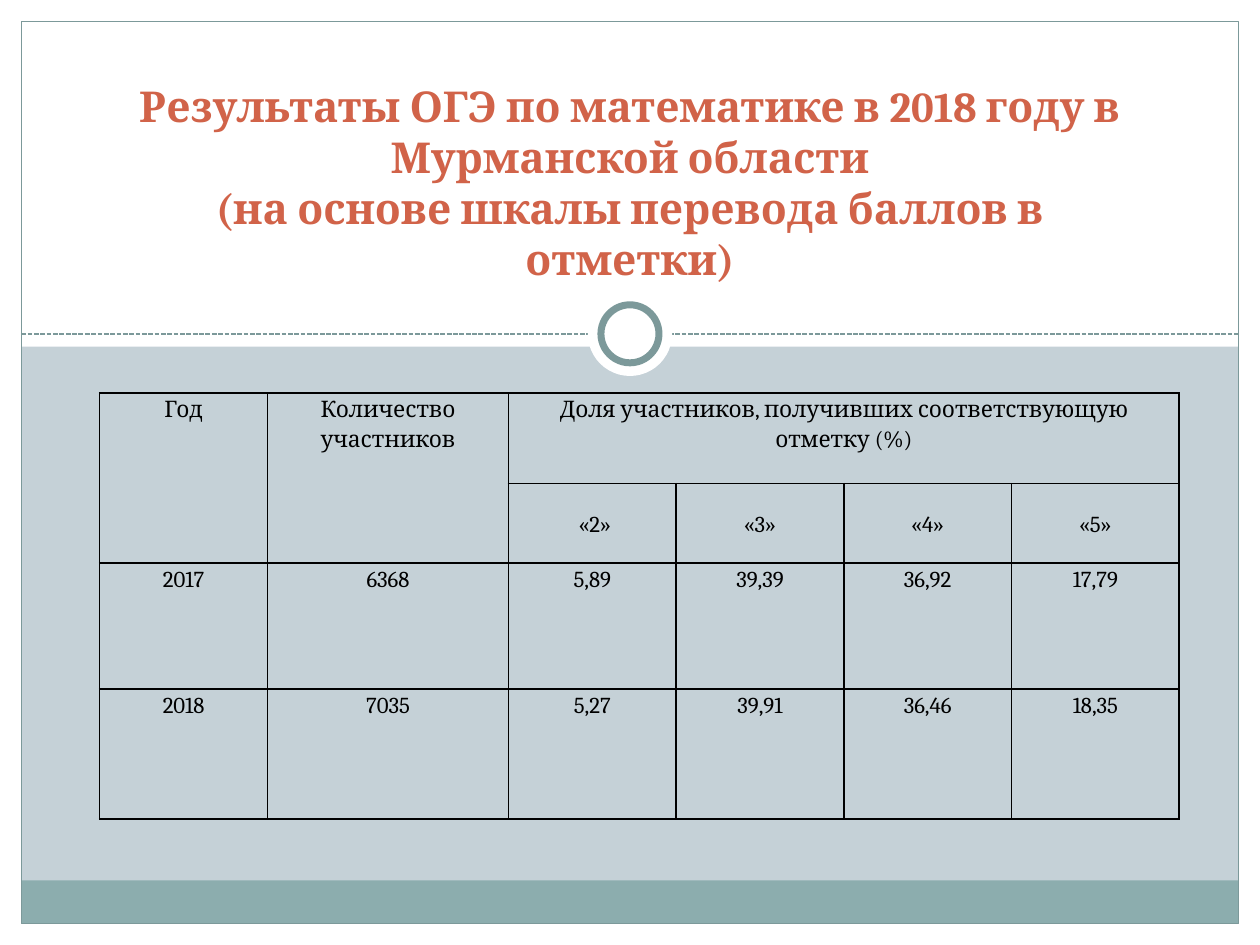
import pptx
import pptx.dml.color
import pptx.enum.dml
import pptx.enum.shapes
import pptx.enum.text
import pptx.oxml
import pptx.oxml.ns
import pptx.util

Cm = pptx.util.Cm
Pt = pptx.util.Pt
SHAPES = pptx.enum.shapes.MSO_SHAPE
ANCHORS = pptx.enum.text.MSO_ANCHOR
CENTER = pptx.enum.text.PP_ALIGN.CENTER

TITLE_LINES = [
    "Результаты ОГЭ по математике в 2018 году в Мурманской области",
    "(на основе шкалы перевода баллов в отметки)",
]
TABLE_ROWS = [
    ["Год", "Количество участников",
     "Доля участников, получивших соответствующую отметку (%)", "", "", ""],
    ["", "", " «2»", "«3»", "«4»", "«5»"],
    ["2017", "6368", "5,89", "39,39", "36,92", "17,79"],
    ["2018", "7035", "5,27", "39,91", "36,46", "18,35"],
]
MERGES = [((0, 0), (1, 0)), ((0, 1), (1, 1)), ((0, 2), (0, 5))]
COLUMN_WIDTHS = [3.38, 4.86, 3.38, 3.38, 3.38, 3.38]
ROW_HEIGHTS = [1.83, 1.6, 2.54, 2.62]

WIDTH, HEIGHT, MARGIN = 25.4, 19.05, 0.43
INNER_WIDTH, INNER_HEIGHT = WIDTH - 2 * MARGIN, HEIGHT - 2 * MARGIN
RULE_TOP = 6.73
WHITE, TEAL, BLACK = "FFFFFF", "7C999A", "000000"


def circle_box(diameter):
    return (WIDTH - diameter) / 2, RULE_TOP - diameter / 2, diameter, diameter


FRAME = [
    (SHAPES.RECTANGLE, (0, HEIGHT - MARGIN, WIDTH, MARGIN), WHITE, None),
    (SHAPES.RECTANGLE, (WIDTH - MARGIN, 0, MARGIN, HEIGHT), WHITE, None),
    (SHAPES.RECTANGLE, (0, 0, MARGIN, HEIGHT), WHITE, None),
    (SHAPES.RECTANGLE, (0, 0, WIDTH, 6.99), WHITE, None),
    (SHAPES.RECTANGLE, (MARGIN, 17.75, INNER_WIDTH, 0.87), "8CADAE", None),
    (SHAPES.RECTANGLE, (MARGIN, MARGIN, INNER_WIDTH, INNER_HEIGHT), None, 0.75),
]
RING = [
    (SHAPES.OVAL, circle_box(1.7), WHITE, None),
    (SHAPES.OVAL, circle_box(1.17), WHITE, 4),
]


def color(value):
    return pptx.dml.color.RGBColor.from_string(value)


def set_values(target, values):
    for name, value in values.items():
        setattr(target, name, value)


def set_font(font, size, value, bold):
    set_values(font, {"name": "Cambria", "size": Pt(size), "bold": bold})
    font.color.rgb = color(value)


def add_shapes(slide, items):
    for kind, box, fill, line_width in items:
        shape = slide.shapes.add_shape(kind, *map(Cm, box))
        shape.shadow.inherit = False
        if fill:
            shape.fill.solid()
            shape.fill.fore_color.rgb = color(fill)
        else:
            shape.fill.background()
        if line_width:
            shape.line.color.rgb = color(TEAL)
            shape.line.width = Pt(line_width)
        else:
            shape.line.fill.background()


def add_rule(slide):
    rule = slide.shapes.add_connector(
        pptx.enum.shapes.MSO_CONNECTOR.STRAIGHT,
        Cm(MARGIN), Cm(RULE_TOP), Cm(WIDTH - MARGIN), Cm(RULE_TOP))
    rule.line.color.rgb = color(TEAL)
    rule.line.width = Pt(0.9)
    rule.line.dash_style = pptx.enum.dml.MSO_LINE.SQUARE_DOT
    rule.element.spPr.append(pptx.oxml.parse_xml(
        f"<a:effectLst {pptx.oxml.ns.nsdecls('a')}/>"))


def place_title(slide):
    title = slide.shapes.title
    title.element.getparent().append(title.element)
    set_values(title, {"left": Cm(1.9), "top": Cm(1.07),
                       "width": Cm(21.6), "height": Cm(6.3)})
    frame = title.text_frame
    set_values(frame, {"vertical_anchor": ANCHORS.BOTTOM, "word_wrap": True,
                       "auto_size": pptx.enum.text.MSO_AUTO_SIZE.NONE,
                       "margin_bottom": Cm(1.65)})
    paragraph = frame.paragraphs[0]
    set_values(paragraph, {"alignment": CENTER, "line_spacing": 1.0,
                           "space_before": Pt(0)})
    for index, line in enumerate(TITLE_LINES):
        if index:
            paragraph.add_line_break()
        run = paragraph.add_run()
        run.text = line
        set_font(run.font, 24.3, "D16349", True)


def format_cell(cell, text, anchor):
    set_values(cell, {"margin_left": Cm(0.18), "margin_right": Cm(0.18),
                      "margin_top": 0, "margin_bottom": 0,
                      "vertical_anchor": anchor})
    properties = cell._tc.get_or_add_tcPr()
    for side in "LRTB":
        properties.append(pptx.oxml.parse_xml(
            f"<a:ln{side} {pptx.oxml.ns.nsdecls('a')} w='{Pt(1)}'><a:solidFill>"
            f"<a:srgbClr val='{BLACK}'/></a:solidFill></a:ln{side}>"))
    cell.fill.background()
    paragraph = cell.text_frame.paragraphs[0]
    set_values(paragraph, {"alignment": CENTER, "line_spacing": 1.15})
    set_font(paragraph.font, 13, BLACK, False)
    if text:
        run = paragraph.add_run()
        run.text = text
        set_font(run.font, 13, BLACK, False)


def add_results_table(slide):
    table = slide.shapes.add_table(
        len(ROW_HEIGHTS), len(COLUMN_WIDTHS), Cm(2.01), Cm(7.92),
        Cm(sum(COLUMN_WIDTHS)), Cm(sum(ROW_HEIGHTS))).table
    set_values(table, {"first_row": False, "horz_banding": False})
    for column, width in zip(table.columns, COLUMN_WIDTHS):
        column.width = Cm(width)
    for row, height in zip(table.rows, ROW_HEIGHTS):
        row.height = Cm(height)
    for row_index, texts in enumerate(TABLE_ROWS):
        anchor = ANCHORS.MIDDLE if row_index == 1 else ANCHORS.TOP
        for column_index, text in enumerate(texts):
            format_cell(table.cell(row_index, column_index), text, anchor)
    for first, last in MERGES:
        table.cell(*first).merge(table.cell(*last))


def main():
    presentation = pptx.Presentation()
    set_values(presentation, {"slide_width": Cm(WIDTH), "slide_height": Cm(HEIGHT)})
    slide = presentation.slides.add_slide(presentation.slide_layouts[5])
    slide.background.fill.solid()
    slide.background.fill.fore_color.rgb = color("C5D1D7")
    add_shapes(slide, FRAME)
    add_rule(slide)
    add_shapes(slide, RING)
    place_title(slide)
    add_results_table(slide)
    presentation.save("out.pptx")


if __name__ == "__main__":
    main()
